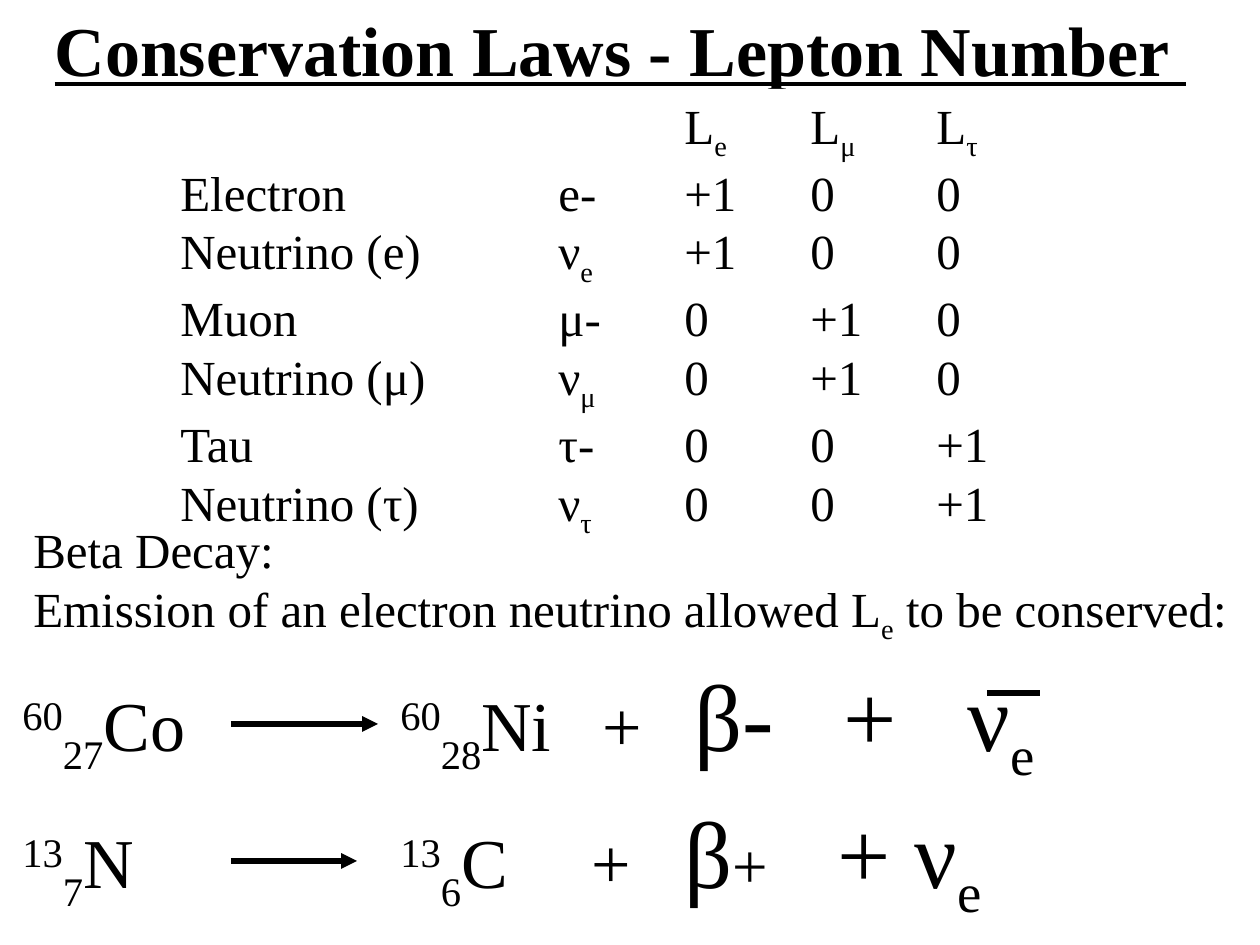
from lxml.etree import SubElement
from pptx import Presentation
from pptx.dml.color import RGBColor
from pptx.enum.shapes import MSO_CONNECTOR, MSO_SHAPE
from pptx.enum.text import MSO_ANCHOR, MSO_AUTO_SIZE, PP_ALIGN
from pptx.oxml.ns import qn
from pptx.util import Pt

PX = 914400 / 126
COLORS = {"ink": "000000", "paper": "FFFFFF"}
FONT = "Times New Roman"
SUP, SUB = 30, -25
LEPTONS = [("Electron", "e"), ("Muon", "μ"), ("Tau", "τ")]


def emu(*lengths):
    return [round(n * PX) for n in lengths]


def rgb(name):
    return RGBColor.from_string(COLORS[name])


def write(tf, paragraphs, size=28, bold=False, underline=False, wrap=False,
          tabs=(), auto_size=MSO_AUTO_SIZE.SHAPE_TO_FIT_TEXT):
    """Fill a frame; each paragraph is a list of (text, baseline %, size) parts."""
    tf.word_wrap = wrap
    tf.auto_size = auto_size
    tf.vertical_anchor = MSO_ANCHOR.TOP
    for i, parts in enumerate(paragraphs):
        p = tf.paragraphs[0] if i == 0 else tf.add_paragraph()
        p.alignment = PP_ALIGN.LEFT
        if tabs:
            tab_list = SubElement(p._p.get_or_add_pPr(), qn("a:tabLst"))
            for pos in emu(*tabs):
                SubElement(tab_list, qn("a:tab"), pos=str(pos), algn="l")
        for text, base, pt in ((*part, 0, 0)[:3] for part in parts):
            r = p.add_run()
            r.text = text
            r.font.name = FONT
            r.font.size = Pt(pt or size)
            r.font.bold = bold
            r.font.underline = underline
            r.font.color.rgb = rgb("ink")
            if base:
                r._r.get_or_add_rPr().set("baseline", str(base * 1000))


def add_line(shapes, x1, x2, y, arrow=False):
    line = shapes.add_connector(MSO_CONNECTOR.STRAIGHT, *emu(x1, y, x2, y))
    line.line.color.rgb = rgb("ink")
    line.line.width = Pt(3)
    if arrow:
        SubElement(line.line._get_or_add_ln(), qn("a:tailEnd"), type="triangle")
    SubElement(line._element.spPr, qn("a:effectLst"))


def add_title(slide, x, y, w, h):
    title = slide.shapes.title
    title.left, title.top, title.width, title.height = emu(x, y, w, h)
    write(title.text_frame, [[("Conservation Laws - Lepton Number ",)]], size=40,
          bold=True, underline=True, wrap=True, auto_size=MSO_AUTO_SIZE.NONE)


def add_lepton_numbers(slide, x, y, w, h):
    """Each lepton and its neutrino carry +1 of their own flavour's number only."""
    header = [("\t",)]
    rows = [header]
    for i, (name, flavour) in enumerate(LEPTONS):
        header += [("\tL",), (flavour, SUB)]
        numbers = "".join("\t+1" if j == i else "\t0" for j in range(len(LEPTONS)))
        rows.append([(f"{name}\t{flavour}-{numbers}",)])
        rows.append([(f"Neutrino ({flavour})\tν",), (flavour, SUB), (numbers,)])
    sp = slide.shapes.add_shape(MSO_SHAPE.RECTANGLE, *emu(x, y, w, h))
    sp.shadow.inherit = False
    sp.fill.solid()
    sp.fill.fore_color.rgb = rgb("paper")
    sp.line.fill.background()
    write(sp.text_frame, rows, tabs=range(378, 757, 126))


def add_beta_decay(slide, x, y, w, h):
    sp = slide.shapes.add_textbox(*emu(x, y, w, h))
    write(sp.text_frame, [
        [("Beta Decay:",)],
        [("Emission of an electron neutrino allowed L",), ("e", SUB),
         (" to be conserved:",)],
    ])


def add_reaction(slide, x, y, w, h, parts, tabs, arrow_length, bar=False):
    shapes = slide.shapes.add_group_shape().shapes
    sp = shapes.add_textbox(*emu(x, y, w, h))
    write(sp.text_frame, [parts], size=40, wrap=True, tabs=tabs)
    if bar:
        add_line(shapes, x + 977, x + 1030, y + 42)
    add_line(shapes, x + 221, x + 221 + arrow_length, y + 73, arrow=True)


def nuclide(mass, charge, symbol):
    return [(mass, SUP), (charge, SUB), (symbol,)]


def main():
    prs = Presentation()
    prs.slide_width, prs.slide_height = emu(1260, 945)
    slide = prs.slides.add_slide(prs.slide_layouts[5])
    add_title(slide, 42, 0, 1187, 97)
    antineutrino = [("ν", 0, 54), ("e", SUB, 54)]
    add_reaction(
        slide, 10, 651, 1176, 126,
        nuclide("60", "27", "Co\t") + nuclide("60", "28", "Ni\t+\t")
        + [("β-\t+\t", 0, 54)] + antineutrino,
        tabs=(378, 580, 672, 821, 945), arrow_length=147, bar=True)
    add_reaction(
        slide, 10, 788, 1176, 126,
        nuclide("13", "7", "N\t") + nuclide("13", "6", "C\t+\t")
        + [("β", 0, 54), ("+", 0, 36), ("\t+ ν", 0, 54), ("e", SUB, 54)],
        tabs=(378, 569, 662, 815), arrow_length=126)
    add_beta_decay(slide, 21, 513, 1221, 130)
    add_lepton_numbers(slide, 168, 89, 833, 425)
    prs.save("out.pptx")


if __name__ == "__main__":
    main()
